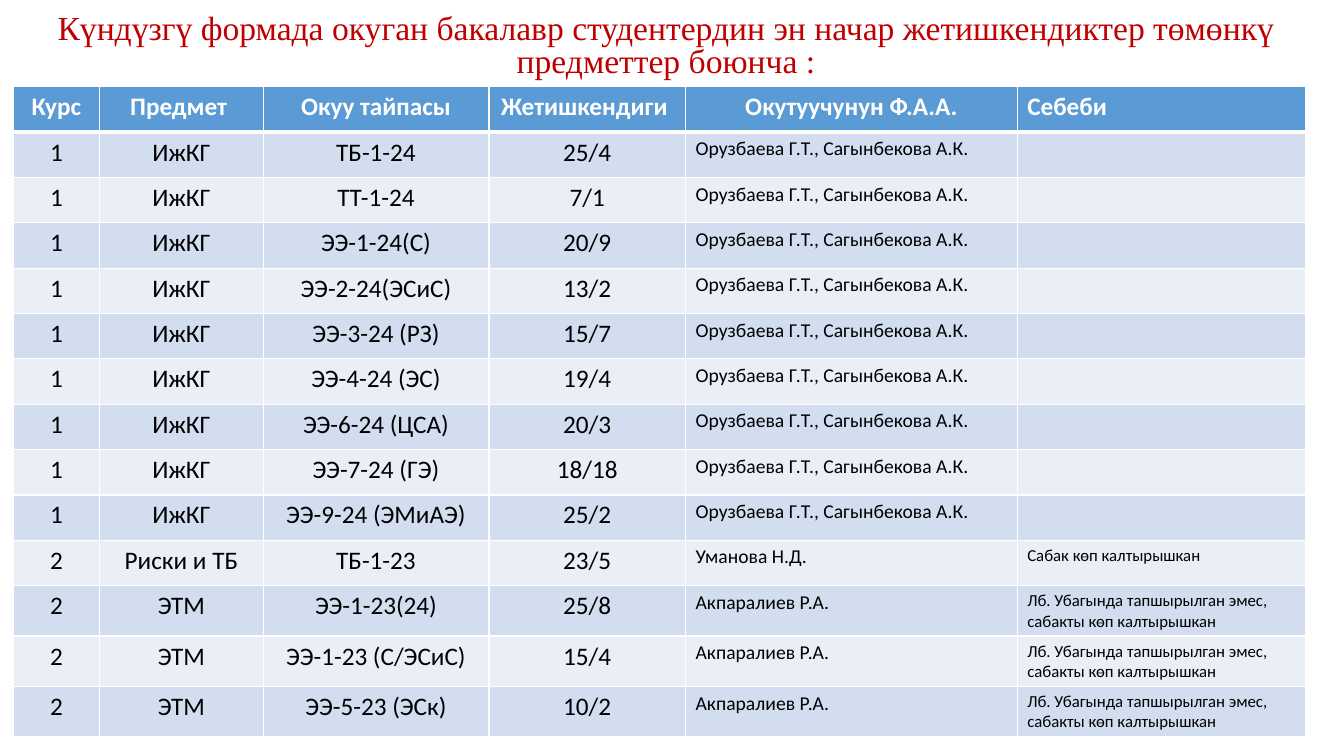
from lxml.etree import SubElement
from pptx import Presentation
from pptx.dml.color import RGBColor
from pptx.enum.text import MSO_ANCHOR, PP_ALIGN
from pptx.oxml.ns import qn
from pptx.util import Inches, Pt

# Content
TITLE = ("Күндүзгү формада окуган бакалавр студентердин эн начар "
         "жетишкендиктер төмөнкү предметтер боюнча :")
HEADERS = ("Курс", "Предмет ", "Окуу тайпасы", "Жетишкендиги ",
           "Окутуучунун Ф.А.А.", "Себеби")
GRAPHICS_TEACHERS = "Орузбаева Г.Т., Сагынбекова А.К."
GRAPHICS_RESULTS = (
    ("ТБ-1-24", "25/4"),
    ("ТТ-1-24", "7/1"),
    ("ЭЭ-1-24(С)", "20/9"),
    ("ЭЭ-2-24(ЭСиС)", "13/2"),
    ("ЭЭ-3-24 (РЗ)", "15/7"),
    ("ЭЭ-4-24 (ЭС)", "19/4"),
    ("ЭЭ-6-24 (ЦСА)", "20/3"),
    ("ЭЭ-7-24 (ГЭ)", "18/18"),
    ("ЭЭ-9-24 (ЭМиАЭ)", "25/2"),
)
MATERIALS_TEACHER = "Акпаралиев Р.А."
MATERIALS_REASON = "Лб. Убагында тапшырылган эмес, сабакты көп калтырышкан"
MATERIALS_RESULTS = (
    ("ЭЭ-1-23(24)", "25/8"),
    ("ЭЭ-1-23 (С/ЭСиС)", "15/4"),
    ("ЭЭ-5-23 (ЭСк)", "10/2"),
)
ROWS = [
    HEADERS,
    *[("1", "ИжКГ", group, result, GRAPHICS_TEACHERS, "")
      for group, result in GRAPHICS_RESULTS],
    ("2", "Риски и ТБ", "ТБ-1-23", "23/5", "Уманова Н.Д.", "Сабак көп калтырышкан"),
    *[("2", "ЭТМ", group, result, MATERIALS_TEACHER, MATERIALS_REASON)
      for group, result in MATERIALS_RESULTS],
]

# Format
COLUMN_WIDTHS = (0.86, 1.62, 2.24, 1.95, 3.29, 2.86)
BODY_SIZES = (18, 18, 18, 18, 14, 12)
ROW_HEIGHT = 0.45
HEADER_SIZE = 18
TEACHER_COLUMN, REASON_COLUMN = 4, 5
RED = RGBColor(0xC0, 0x00, 0x00)
WHITE = RGBColor(0xFF, 0xFF, 0xFF)
BLACK = RGBColor(0x00, 0x00, 0x00)
HEADER_BLUE = RGBColor(0x5B, 0x9B, 0xD5)
BANDS = (RGBColor(0xEA, 0xEF, 0xF7), RGBColor(0xD2, 0xDE, 0xEF))


def write_text(frame, text, *, size, color, font="Calibri", bold=False,
               align=PP_ALIGN.LEFT):
    para = frame.paragraphs[0]
    para.alignment = align
    span = para.add_run()
    span.text = text
    span.font.name = font
    span.font.size = Pt(size)
    span.font.bold = bold
    span.font.color.rgb = color
    return para


def add_borders(cell, header):
    properties = cell._tc.get_or_add_tcPr()
    for side in ("lnL", "lnR", "lnT", "lnB"):
        width = 3 if header and side == "lnB" else 1
        line = SubElement(properties, qn(f"a:{side}"), w=str(Pt(width)))
        fill = SubElement(line, qn("a:solidFill"))
        SubElement(fill, qn("a:srgbClr"), val=str(WHITE))


def add_title(page):
    box = page.shapes.add_textbox(Inches(0.13), Inches(0.08), Inches(12.95), Inches(0.78))
    frame = box.text_frame
    frame.word_wrap = True
    frame.vertical_anchor = MSO_ANCHOR.MIDDLE
    para = write_text(frame, TITLE, size=24, color=RED, font="Times New Roman",
                      align=PP_ALIGN.CENTER)
    para.line_spacing = 0.8
    para.space_before = Pt(10)


def add_results(page):
    table = page.shapes.add_table(
        len(ROWS), len(HEADERS), Inches(0.13), Inches(0.86),
        Inches(sum(COLUMN_WIDTHS)), Inches(ROW_HEIGHT * len(ROWS))).table
    for column, width in zip(table.columns, COLUMN_WIDTHS):
        column.width = Inches(width)
    for row_number, values in enumerate(ROWS):
        header = row_number == 0
        table.rows[row_number].height = Inches(ROW_HEIGHT)
        for column_number, text in enumerate(values):
            cell = table.cell(row_number, column_number)
            add_borders(cell, header)
            cell.fill.solid()
            cell.fill.fore_color.rgb = HEADER_BLUE if header else BANDS[row_number % 2]
            if not text:
                continue
            left = column_number == REASON_COLUMN or (
                column_number == TEACHER_COLUMN and not header)
            write_text(cell.text_frame, text,
                       size=HEADER_SIZE if header else BODY_SIZES[column_number],
                       color=WHITE if header else BLACK, bold=header,
                       align=PP_ALIGN.LEFT if left else PP_ALIGN.CENTER)


def main():
    deck = Presentation()
    deck.slide_width, deck.slide_height = Inches(13.33), Inches(7.5)
    page = deck.slides.add_slide(deck.slide_layouts[6])
    add_title(page)
    add_results(page)
    deck.save("out.pptx")


if __name__ == "__main__":
    main()
